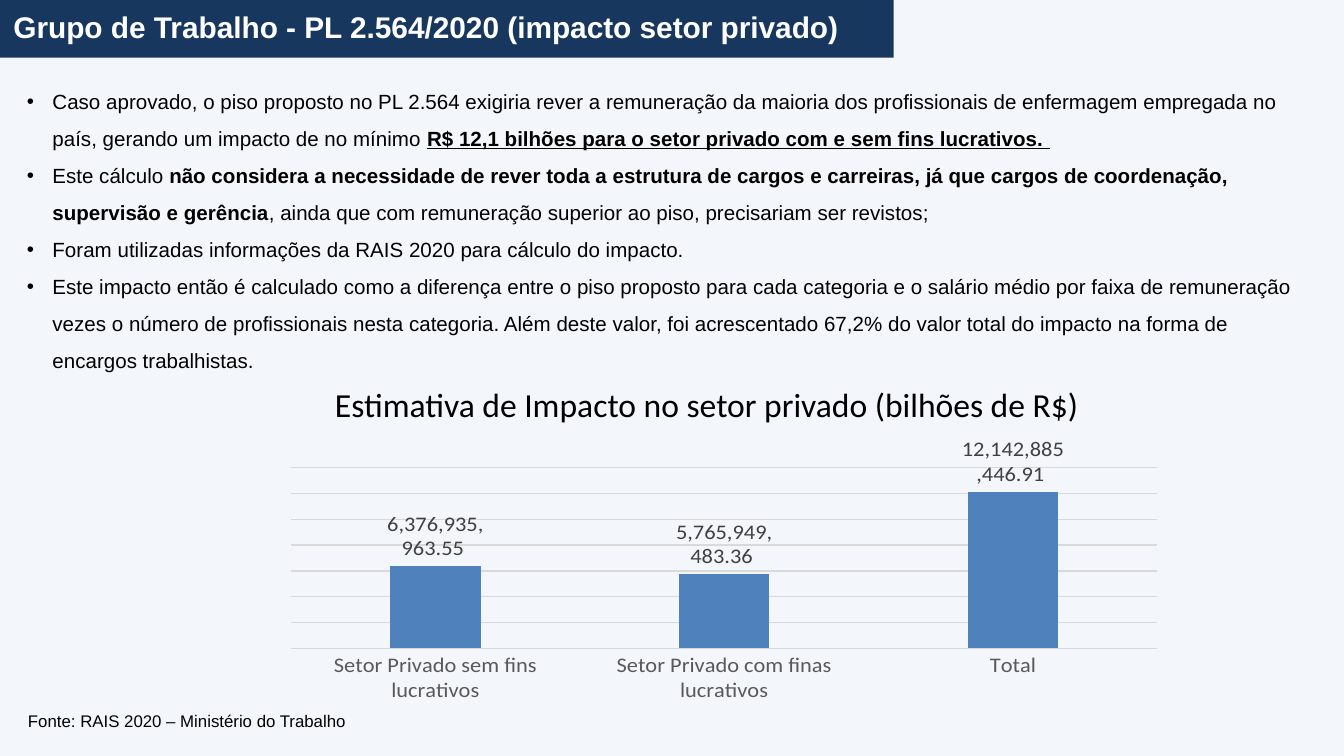
from dataclasses import dataclass

from lxml import etree
from pptx import Presentation
from pptx.chart.chart import Chart
from pptx.chart.data import CategoryChartData
from pptx.dml.color import RGBColor
from pptx.enum.chart import XL_CHART_TYPE, XL_LABEL_POSITION, XL_TICK_MARK
from pptx.enum.shapes import MSO_SHAPE
from pptx.enum.text import MSO_ANCHOR, MSO_AUTO_SIZE, PP_ALIGN
from pptx.oxml.ns import qn
from pptx.slide import Slide
from pptx.text.text import Font
from pptx.util import Inches, Pt

SLIDE_WIDTH = Inches(10)
SLIDE_HEIGHT = SLIDE_WIDTH * 9 // 16

BACKGROUND = RGBColor(0xF3, 0xF6, 0xFB)
NAVY = RGBColor(0x17, 0x37, 0x5E)
WHITE = RGBColor(0xFF, 0xFF, 0xFF)
BLACK = RGBColor(0, 0, 0)
BAR_BLUE = RGBColor(0x4F, 0x81, 0xBD)
GRID_GRAY = RGBColor(0xD9, 0xD9, 0xD9)
AXIS_GRAY = RGBColor(0x59, 0x59, 0x59)
LABEL_GRAY = RGBColor(0x40, 0x40, 0x40)

ACCOUNTING = '_(* #,##0.00_);_(* \\(#,##0.00\\);_(* "-"??_);_(@_)'
PLOT_AREA = {"x": 0.023, "y": 0.115, "w": 0.955, "h": 0.633}


@dataclass(frozen=True)
class Span:
    text: str
    bold: bool = False
    underline: bool = False


@dataclass(frozen=True)
class Caption:
    text: str
    left: float
    top: float
    width: float
    height: float
    size: float
    font_name: str
    align: PP_ALIGN


BULLETS = [
    [
        Span("Caso aprovado, o piso proposto no PL 2.564 exigiria rever a remuneração da maioria dos "
             "profissionais de enfermagem empregada no país, gerando um impacto de no mínimo "),
        Span("R$ 12,1 bilhões para o setor privado com e sem fins lucrativos. ", bold=True, underline=True),
    ],
    [
        Span("Este cálculo "),
        Span("não considera a necessidade de rever toda a estrutura de cargos e carreiras, já que "
             "cargos de coordenação, supervisão e gerência", bold=True),
        Span(", ainda que com remuneração superior ao piso, precisariam ser revistos;"),
    ],
    [Span("Foram utilizadas informações da RAIS 2020 para cálculo do impacto.")],
    [
        Span("Este impacto então é calculado como a diferença entre o piso proposto para cada categoria "
             "e o salário médio por faixa de remuneração vezes o número de profissionais nesta categoria. "
             "Além deste valor, foi acrescentado 67,2% do valor total do impacto na forma de encargos "
             "trabalhistas."),
    ],
]

CAPTIONS = [
    Caption("Fonte: RAIS 2020 – Ministério do Trabalho",
            0.11, 5.24, 9.69, 0.25, 9, "Arial", PP_ALIGN.LEFT),
    Caption("Estimativa de Impacto no setor privado (bilhões de R$)",
            2.24, 2.81, 6.04, 0.4, 18, "Calibri", PP_ALIGN.CENTER),
]

IMPACTS = {
    "Setor Privado sem fins lucrativos": 6376935963.55,
    "Setor Privado com finas lucrativos": 5765949483.36,
    "Total": 12142885446.91,
}


def style_font(font: Font, size: float, color: RGBColor, name: str) -> None:
    font.size = Pt(size)
    font.color.rgb = color
    font.name = name


def place(shape, left: float, top: float, width: float, height: float) -> None:
    shape.left, shape.top = Inches(left), Inches(top)
    shape.width, shape.height = Inches(width), Inches(height)


def add_heading(slide: Slide) -> None:
    title = slide.shapes.title
    place(title, 0, 0.01, 6.49, 0.37)
    frame = title.text_frame
    frame.text = "Grupo de Trabalho - PL 2.564/2020 (impacto setor privado)"
    frame.word_wrap = False
    frame.auto_size = MSO_AUTO_SIZE.NONE
    frame.vertical_anchor = MSO_ANCHOR.MIDDLE
    heading = frame.paragraphs[0]
    heading.alignment = PP_ALIGN.LEFT
    style_font(heading.runs[0].font, 16, WHITE, "Arial")
    heading.runs[0].font.bold = True

    banner = slide.shapes.add_shape(
        MSO_SHAPE.RECTANGLE, Inches(-0.04), Inches(-0.09), Inches(6.69), Inches(0.52))
    banner.shadow.inherit = False
    banner.fill.solid()
    banner.fill.fore_color.rgb = NAVY
    banner.line.fill.background()
    title.element.addprevious(banner.element)  # banner lies behind the title


def add_bullets(slide: Slide) -> None:
    body = slide.placeholders[1]
    place(body, 0.1, 0.52, 9.69, 2.79)
    frame = body.text_frame
    frame.auto_size = MSO_AUTO_SIZE.NONE
    for index, spans in enumerate(BULLETS):
        bullet = frame.add_paragraph() if index else frame.paragraphs[0]
        bullet.line_spacing = 1.5
        bullet.space_before = bullet.space_after = Pt(0)
        properties = bullet._p.get_or_add_pPr()
        properties.set("marL", str(Inches(0.19)))
        properties.set("indent", str(Inches(-0.19)))
        etree.SubElement(properties, qn("a:buFont"), typeface="Arial")
        etree.SubElement(properties, qn("a:buChar"), char="•")
        for span in spans:
            run = bullet.add_run()
            run.text = span.text
            style_font(run.font, 11, BLACK, "Arial")
            run.font.bold = span.bold
            run.font.underline = span.underline


def add_caption(slide: Slide, caption: Caption) -> None:
    box = slide.shapes.add_textbox(
        Inches(caption.left), Inches(caption.top), Inches(caption.width), Inches(caption.height))
    box.text_frame.word_wrap = True
    box.text_frame.text = caption.text
    paragraph = box.text_frame.paragraphs[0]
    paragraph.alignment = caption.align
    style_font(paragraph.runs[0].font, caption.size, BLACK, caption.font_name)


def set_plot_layout(chart: Chart) -> None:
    """Fix the inner plot area as fractions of the chart."""
    plot_area = chart.element.find(".//" + qn("c:plotArea"))
    for old_layout in plot_area.findall(qn("c:layout")):
        plot_area.remove(old_layout)
    layout = etree.Element(qn("c:layout"))
    manual = etree.SubElement(layout, qn("c:manualLayout"))
    etree.SubElement(manual, qn("c:layoutTarget"), val="inner")
    for side in ("x", "y"):
        etree.SubElement(manual, qn(f"c:{side}Mode"), val="edge")
    for side, fraction in PLOT_AREA.items():
        etree.SubElement(manual, qn(f"c:{side}"), val=str(fraction))
    plot_area.insert(0, layout)


def add_impact_chart(slide: Slide) -> None:
    impact_data = CategoryChartData(number_format=ACCOUNTING)
    impact_data.categories = list(IMPACTS)
    impact_data.add_series("Series 1", list(IMPACTS.values()))
    chart = slide.shapes.add_chart(
        XL_CHART_TYPE.COLUMN_CLUSTERED, Inches(2.01), Inches(3.07), Inches(6.75), Inches(2.29),
        impact_data).chart
    chart.has_title = False
    chart.has_legend = False
    style_font(chart.font, 12, BLACK, "Calibri")

    sectors = chart.category_axis
    sectors.major_tick_mark = sectors.minor_tick_mark = XL_TICK_MARK.NONE
    sectors.format.line.color.rgb = GRID_GRAY
    sectors.format.line.width = Pt(0.75)
    style_font(sectors.tick_labels.font, 12, AXIS_GRAY, "Calibri")

    amounts = chart.value_axis
    amounts.visible = False
    amounts.minimum_scale, amounts.maximum_scale = 0, 14e9
    amounts.major_unit = 2e9
    amounts.major_gridlines.format.line.color.rgb = GRID_GRAY
    amounts.major_gridlines.format.line.width = Pt(0.75)

    plot = chart.plots[0]
    plot.vary_by_categories = False
    plot.gap_width, plot.overlap = 219, -27
    columns = plot.series[0]
    columns.format.fill.solid()
    columns.format.fill.fore_color.rgb = BAR_BLUE
    labels = columns.data_labels
    labels.show_value = True
    labels.position = XL_LABEL_POSITION.OUTSIDE_END
    labels.number_format, labels.number_format_is_linked = ACCOUNTING, False
    style_font(labels.font, 12, LABEL_GRAY, "Calibri")
    set_plot_layout(chart)


def main() -> None:
    presentation = Presentation()
    presentation.slide_width, presentation.slide_height = SLIDE_WIDTH, SLIDE_HEIGHT
    slide = presentation.slides.add_slide(presentation.slide_layouts[1])
    slide.background.fill.solid()
    slide.background.fill.fore_color.rgb = BACKGROUND
    add_heading(slide)
    add_bullets(slide)
    add_impact_chart(slide)
    for caption in CAPTIONS:
        add_caption(slide, caption)
    presentation.save("out.pptx")


if __name__ == "__main__":
    main()
